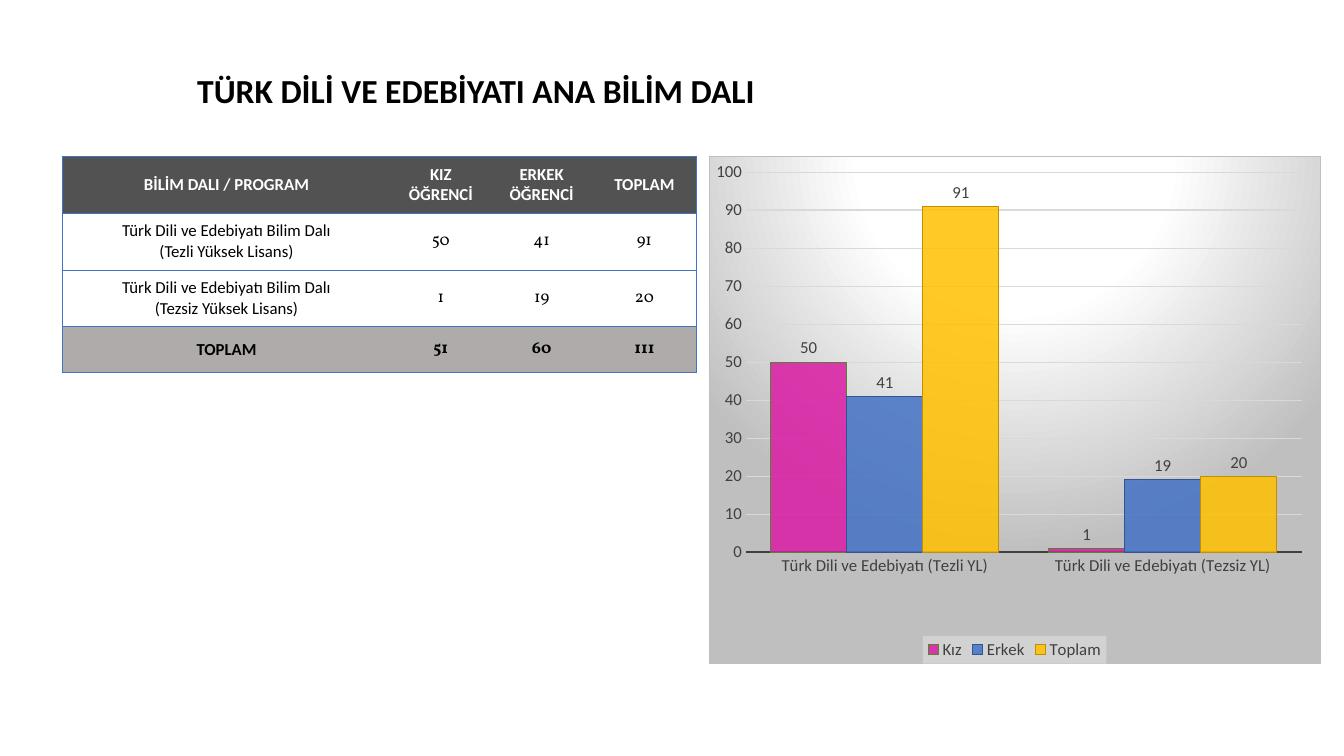
import pptx
import pptx.chart.data
import pptx.dml.color
import pptx.enum.chart
import pptx.enum.text
import pptx.oxml
import pptx.oxml.ns
import pptx.util
from pptx.util import Cm

DRAWING = 'xmlns:a="http://schemas.openxmlformats.org/drawingml/2006/main"'
CHART = 'xmlns:c="http://schemas.openxmlformats.org/drawingml/2006/chart"'
PLAIN_TABLE_STYLE = "{2D5ABB26-0587-4C30-8999-92F81FD0307C}"

COLUMN_WIDTHS = [8.28, 2.52, 2.56, 2.62]
ROW_HEIGHTS = [1.43, 1.43, 1.43, 1.16]
ROWS = [
    ["BİLİM DALI / PROGRAM", "KIZ ÖĞRENCİ", "ERKEK ÖĞRENCİ", "TOPLAM"],
    ["Türk Dili ve Edebiyatı Bilim Dalı\n(Tezli Yüksek Lisans)", "50", "41", "91"],
    ["Türk Dili ve Edebiyatı Bilim Dalı\n(Tezsiz Yüksek Lisans)", "1", "19", "20"],
    ["TOPLAM", "51", "60", "111"],
]
CATEGORIES = ["Türk Dili ve Edebiyatı (Tezli YL)", "Türk Dili ve Edebiyatı (Tezsiz YL)"]
SERIES = [  # name, values, fill, outline
    ("Kız", (50, 1), "D91BA3", "548235"),
    ("Erkek", (41, 19), "4472C4", "2F5597"),
    ("Toplam", (91, 20), "FFC000", "BF9000"),
]


def color(value):
    return pptx.dml.color.RGBColor.from_string(value)


def style_font(font, size, value, name="Calibri", bold=False):
    font.size = pptx.util.Pt(size)
    font.name = name
    font.bold = bold
    font.color.rgb = color(value)


def style_line(line, value, width):
    line.color.rgb = color(value)
    line.width = pptx.util.Pt(width)


def add_title(slide, left, top, width, height):
    box = slide.shapes.add_textbox(left, top, width, height)
    box.text_frame.word_wrap = True
    box.text_frame.text = "TÜRK DİLİ VE EDEBİYATI ANA BİLİM DALI"
    style_font(box.text_frame.paragraphs[0].runs[0].font, 24, "000000", bold=True)


def add_borders(cell, sides):
    for side in sides:
        cell._tc.get_or_add_tcPr().append(pptx.oxml.parse_xml(
            f'<a:ln{side} {DRAWING} w="6350"><a:solidFill><a:srgbClr val="4472C4"/>'
            f'</a:solidFill></a:ln{side}>'))


def add_student_table(slide, left, top):
    frame = slide.shapes.add_table(
        len(ROWS), len(COLUMN_WIDTHS), left, top,
        Cm(sum(COLUMN_WIDTHS)), Cm(sum(ROW_HEIGHTS)))
    table = frame.table
    table.first_row = table.horz_banding = False
    table._tbl.xpath("./a:tblPr/a:tableStyleId")[0].text = PLAIN_TABLE_STYLE
    for column, width in zip(table.columns, COLUMN_WIDTHS):
        column.width = Cm(width)
    last_row, last_column = len(ROWS) - 1, len(COLUMN_WIDTHS) - 1
    fills = {0: "525252", last_row: "AFABAB"}

    for row_index, texts in enumerate(ROWS):
        table.rows[row_index].height = Cm(ROW_HEIGHTS[row_index])
        for column_index, text in enumerate(texts):
            cell = table.cell(row_index, column_index)
            cell.text = text
            cell.vertical_anchor = pptx.enum.text.MSO_ANCHOR.MIDDLE
            cell.margin_left = cell.margin_right = Cm(0.38)
            cell.margin_top = cell.margin_bottom = Cm(0.13)
            # Frame around the table and a rule between the rows
            outer = {0: "L", last_column: "R"}.get(column_index, "")
            add_borders(cell, outer + "TB")
            if row_index in fills:
                cell.fill.solid()
                cell.fill.fore_color.rgb = color(fills[row_index])
            else:
                cell.fill.background()
            is_number = row_index > 0 and column_index > 0
            for paragraph in cell.text_frame.paragraphs:
                paragraph.alignment = pptx.enum.text.PP_ALIGN.CENTER
                style_font(paragraph.runs[0].font, 12,
                           "000000" if row_index else "FFFFFF",
                           "Vollkorn" if is_number else "Calibri",
                           row_index in fills)


def style_chart_background(chart):
    area = pptx.oxml.parse_xml(
        f'<c:spPr {CHART} {DRAWING}><a:gradFill><a:gsLst>'
        '<a:gs pos="0"><a:srgbClr val="FFFFFF"/></a:gs>'
        '<a:gs pos="39000"><a:srgbClr val="FFFFFF"/></a:gs>'
        '<a:gs pos="100000"><a:srgbClr val="BFBFBF"/></a:gs></a:gsLst>'
        '<a:path path="circle"><a:fillToRect l="50000" t="-80000" r="50000" b="180000"/>'
        '</a:path></a:gradFill><a:ln w="9525"><a:solidFill><a:srgbClr val="BFBFBF"/>'
        '</a:solidFill></a:ln></c:spPr>')
    chart.element.xpath("./c:chart")[0].addnext(area)


def place_plot(chart, x, y, width, height):
    plot_area = chart.element.xpath("./c:chart/c:plotArea")[0]
    for layout in plot_area.xpath("./c:layout"):
        plot_area.remove(layout)
    plot_area.insert(0, pptx.oxml.parse_xml(
        f'<c:layout {CHART}><c:manualLayout><c:layoutTarget val="inner"/>'
        '<c:xMode val="edge"/><c:yMode val="edge"/>'
        f'<c:x val="{x}"/><c:y val="{y}"/><c:w val="{width}"/><c:h val="{height}"/>'
        '</c:manualLayout></c:layout>'))


def add_legend(chart):
    chart.has_legend = True
    legend = chart.legend
    legend.position = pptx.enum.chart.XL_LEGEND_POSITION.BOTTOM
    legend.include_in_layout = False
    style_font(legend.font, 12, "404040")
    legend_element = chart.element.xpath("./c:chart/c:legend")[0]
    legend_element.xpath("./c:txPr")[0].addprevious(pptx.oxml.parse_xml(
        f'<c:spPr {CHART} {DRAWING}><a:solidFill><a:srgbClr val="F2F2F2">'
        '<a:alpha val="39000"/></a:srgbClr></a:solidFill></c:spPr>'))


def add_student_chart(slide, left, top, width, height):
    data = pptx.chart.data.CategoryChartData()
    data.categories = CATEGORIES
    for name, values, _, _ in SERIES:
        data.add_series(name, values)
    chart = slide.shapes.add_chart(
        pptx.enum.chart.XL_CHART_TYPE.COLUMN_CLUSTERED, left, top, width, height, data).chart
    chart.has_title = False
    style_font(chart.font, 10, "000000")
    style_chart_background(chart)
    place_plot(chart, 0.06, 0.03, 0.91, 0.75)
    add_legend(chart)

    # Axes
    for axis in (chart.category_axis, chart.value_axis):
        axis.major_tick_mark = axis.minor_tick_mark = pptx.enum.chart.XL_TICK_MARK.NONE
        style_font(axis.tick_labels.font, 12, "404040")
    style_line(chart.category_axis.format.line, "404040", 1.5)
    value_axis = chart.value_axis
    value_axis.minimum_scale, value_axis.maximum_scale, value_axis.major_unit = 0, 100, 10
    value_axis.format.line.fill.background()
    style_line(value_axis.major_gridlines.format.line, "D9D9D9", 0.75)

    # Columns and their labels
    plot = chart.plots[0]
    plot.gap_width, plot.overlap = 65, 0
    plot.vary_by_categories = False
    for series, (_, _, fill, outline) in zip(plot.series, SERIES):
        series.format.fill.solid()
        series.format.fill.fore_color.rgb = color(fill)
        style_line(series.format.line, outline, 0.75)
        labels = series.data_labels
        labels.show_value = True
        labels.position = pptx.enum.chart.XL_LABEL_POSITION.OUTSIDE_END
        style_font(labels.font, 12, "404040")
    for fill_color in chart.element.xpath(".//c:ser/c:spPr/a:solidFill/a:srgbClr"):
        fill_color.append(pptx.oxml.parse_xml(f'<a:alpha {DRAWING} val="85000"/>'))


def main():
    presentation = pptx.Presentation()
    presentation.slide_width, presentation.slide_height = Cm(33.87), Cm(19.05)
    slide = presentation.slides.add_slide(presentation.slide_layouts[6])
    content_top = Cm(3.94)
    add_title(slide, Cm(4.72), Cm(1.63), Cm(18.8), Cm(2.31))
    add_student_table(slide, Cm(1.57), content_top)
    add_student_chart(slide, Cm(17.86), content_top, Cm(15.42), Cm(12.8))
    presentation.save("out.pptx")


if __name__ == "__main__":
    main()
